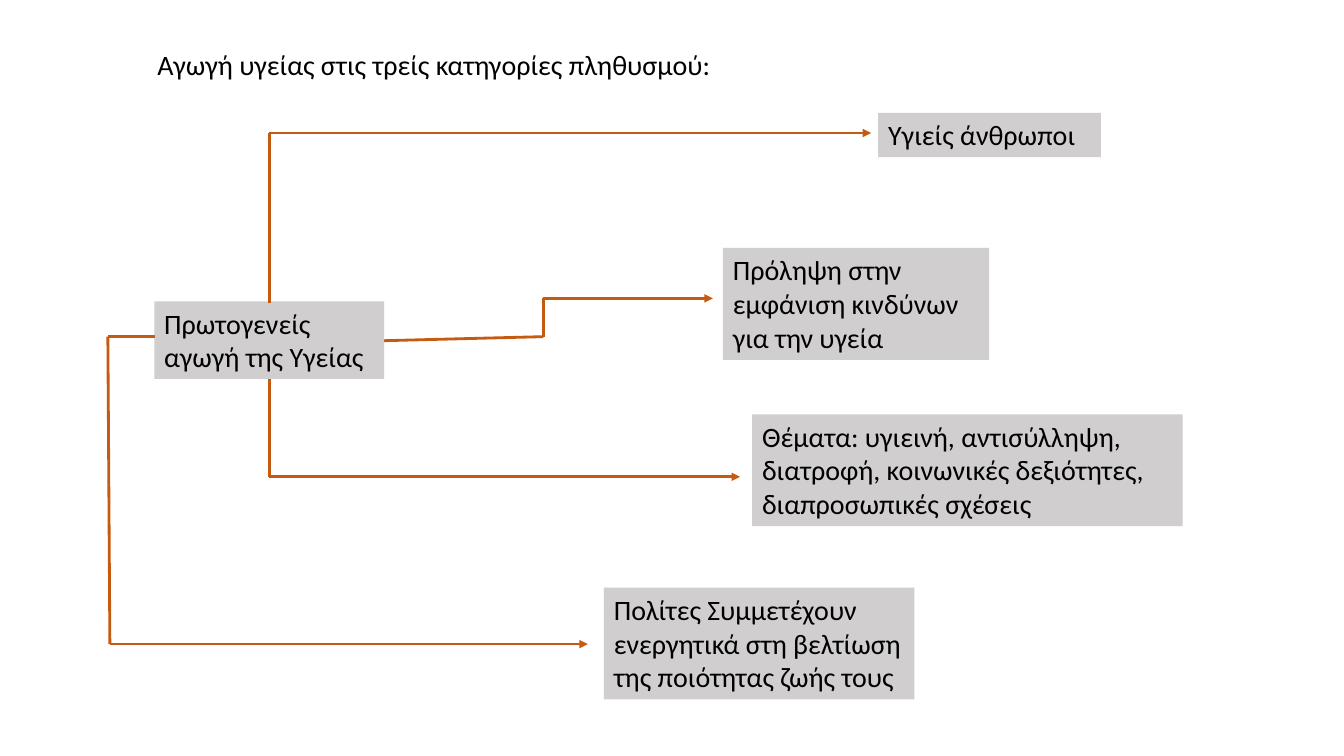
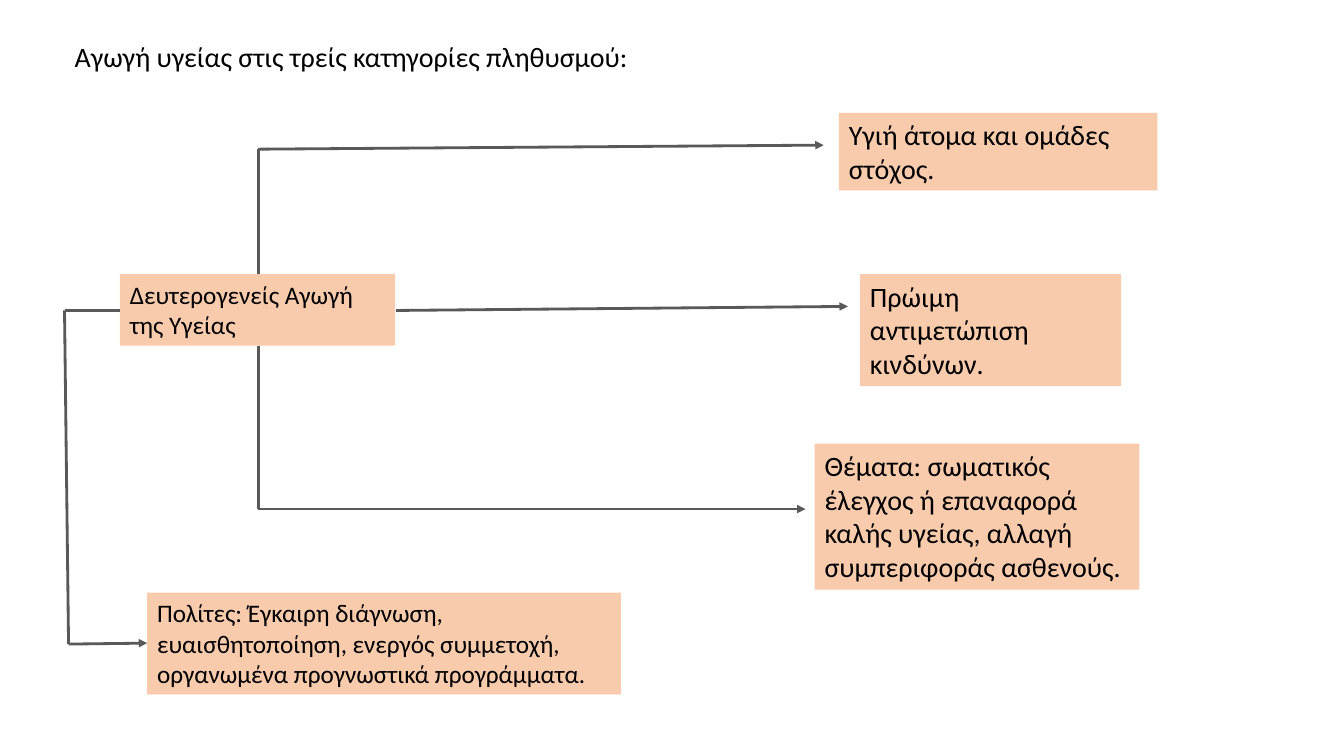
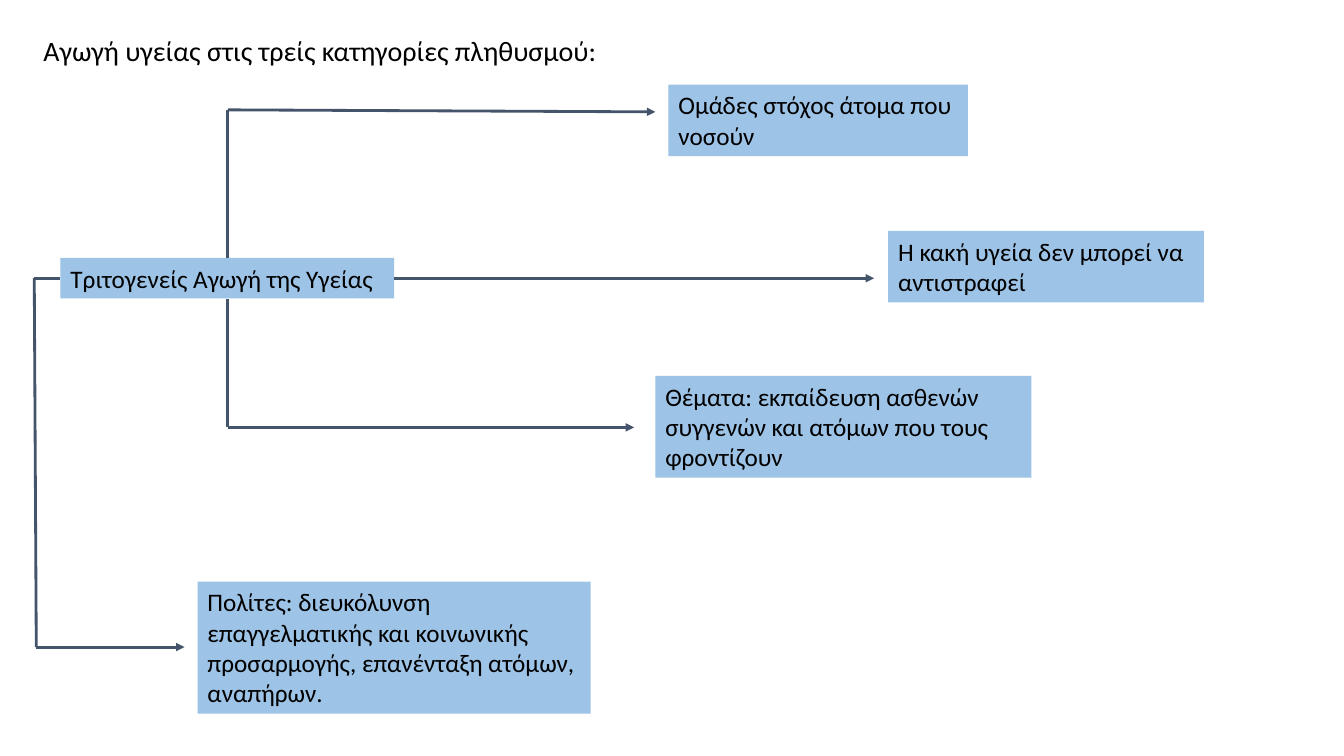
from dataclasses import dataclass
from itertools import pairwise

from lxml import etree
from pptx import Presentation
from pptx.dml.color import RGBColor
from pptx.enum.shapes import MSO_CONNECTOR, MSO_SHAPE
from pptx.enum.text import MSO_ANCHOR, MSO_AUTO_SIZE, PP_ALIGN
from pptx.oxml.ns import qn
from pptx.util import Inches, Pt

RECT = MSO_SHAPE.RECTANGLE
LINE = MSO_CONNECTOR.STRAIGHT
TOP = MSO_ANCHOR.TOP
LEFT = PP_ALIGN.LEFT
FIXED = MSO_AUTO_SIZE.NONE

BLACK = RGBColor(0x00, 0x00, 0x00)
GREY = RGBColor(0xD0, 0xCE, 0xCE)
RUST = RGBColor(0xC5, 0x5A, 0x11)
PEACH = RGBColor(0xF8, 0xCB, 0xAD)
SLATE = RGBColor(0x59, 0x59, 0x59)
SKY = RGBColor(0x9D, 0xC3, 0xE6)
NAVY = RGBColor(0x44, 0x54, 0x6A)

FONT = "Calibri"
TITLE = "Αγωγή υγείας στις τρείς κατηγορίες πληθυσμού:"
TITLE_W, TITLE_H = 6, 0.44
TITLE_SIZE = 20
LINE_W = 2

Point = tuple[float, float]
Route = list[Point]


@dataclass
class Box:
    text: str
    left: float
    top: float
    width: float
    height: float
    size: int = 20


@dataclass
class Page:
    title: Point
    fill: RGBColor
    ink: RGBColor
    boxes: list[Box]
    routes: list[Route]


PAGES = [
    Page(
        (1.46, 0.42), GREY, RUST,
        [
            Box("Πρωτογενείς αγωγή της Υγείας", 1.53, 2.99, 2.28, 0.77),
            Box("Υγιείς άνθρωποι", 8.71, 1.12, 2.21, 0.44),
            Box("Πρόληψη στην εμφάνιση κινδύνων για την υγεία",
                7.17, 2.46, 2.64, 1.11),
            Box("Θέματα: υγιεινή, αντισύλληψη, διατροφή, κοινωνικές "
                "δεξιότητες, διαπροσωπικές σχέσεις",
                7.46, 4.11, 4.27, 1.11),
            Box("Πολίτες Συμμετέχουν ενεργητικά στη βελτίωση της "
                "ποιότητας ζωής τους", 5.99, 5.83, 3.08, 1.11),
        ],
        [
            [(2.67, 3.01), (2.67, 1.32), (8.64, 1.32)],
            [(3.81, 3.38), (5.39, 3.34), (5.39, 2.96), (7.07, 2.96)],
            [(2.67, 3.76), (2.67, 4.73), (7.34, 4.73)],
            [(1.54, 3.34), (1.07, 3.34), (1.09, 6.39), (5.83, 6.39)],
        ],
    ),
    Page(
        (0.64, 0.34), PEACH, SLATE,
        [
            Box("Δευτερογενείς Αγωγή της Υγείας", 1.19, 2.72, 2.73, 0.71, 18),
            Box("Υγιή άτομα και ομάδες στόχος.", 8.32, 1.12, 3.16, 0.77),
            Box("Πρώιμη αντιμετώπιση κινδύνων.", 8.53, 2.72, 2.59, 1.11),
            Box("Θέματα: σωματικός έλεγχος ή επαναφορά καλής υγείας, "
                "αλλαγή συμπεριφοράς ασθενούς.", 8.08, 4.4, 3.22, 1.45),
            Box("Πολίτες: Έγκαιρη διάγνωση, ευαισθητοποίηση, ενεργός "
                "συμμετοχή, οργανωμένα προγνωστικά προγράμματα.",
                1.46, 5.88, 4.7, 1.01, 18),
        ],
        [
            [(3.93, 3.08), (8.41, 3.04)],
            [(2.56, 2.72), (2.56, 1.48), (8.17, 1.44)],
            [(2.56, 3.43), (2.56, 5.05), (7.99, 5.05)],
            [(1.19, 3.08), (0.64, 3.08), (0.68, 6.39), (1.46, 6.38)],
        ],
    ),
    Page(
        (0.33, 0.28), SKY, NAVY,
        [
            Box("Τριτογενείς Αγωγή της Υγείας", 0.6, 2.56, 3.31, 0.4, 18),
            Box("Ομάδες στόχος άτομα που νοσούν", 6.63, 0.84, 2.97, 0.71, 18),
            Box("Η κακή υγεία δεν μπορεί να αντιστραφεί",
                8.81, 2.29, 3.13, 0.71, 18),
            Box("Θέματα: εκπαίδευση ασθενών συγγενών και ατόμων που τους "
                "φροντίζουν", 6.5, 3.73, 3.73, 1.01, 18),
            Box("Πολίτες: διευκόλυνση επαγγελματικής και κοινωνικής "
                "προσαρμογής, επανένταξη ατόμων, αναπήρων.",
                1.96, 5.77, 3.9, 1.31, 18),
        ],
        [
            [(3.91, 2.76), (8.67, 2.76)],
            [(2.26, 2.56), (2.26, 1.09), (6.5, 1.11)],
            [(2.26, 2.97), (2.26, 4.24), (6.29, 4.24)],
            [(0.6, 2.76), (0.34, 2.76), (0.36, 6.42), (1.83, 6.42)],
        ],
    ),
]


def write(shape, text: str, size: int) -> None:
    frame = shape.text_frame
    frame.word_wrap = True
    frame.auto_size = FIXED
    frame.vertical_anchor = TOP
    para = frame.paragraphs[0]
    para.alignment = LEFT
    para.line_spacing = 1.0
    run = para.add_run()
    run.text = text
    run.font.name = FONT
    run.font.size = Pt(size)
    run.font.color.rgb = BLACK


def add_title(slide, at: Point) -> None:
    title = slide.shapes.title
    title.left, title.top = map(Inches, at)
    title.width, title.height = Inches(TITLE_W), Inches(TITLE_H)
    write(title, TITLE, TITLE_SIZE)


def add_box(slide, box: Box, fill: RGBColor) -> None:
    shape = slide.shapes.add_shape(
        RECT, Inches(box.left), Inches(box.top),
        Inches(box.width), Inches(box.height))
    shape.shadow.inherit = False
    shape.fill.solid()
    shape.fill.fore_color.rgb = fill
    shape.line.fill.background()
    write(shape, box.text, box.size)


def add_line(slide, start: Point, end: Point, ink: RGBColor):
    line = slide.shapes.add_connector(
        LINE, *map(Inches, start), *map(Inches, end))
    line.line.color.rgb = ink
    line.line.width = Pt(LINE_W)
    etree.SubElement(line._element.spPr, qn("a:effectLst"))
    return line


def add_route(slide, route: Route, ink: RGBColor) -> None:
    """Join the points with lines and put an arrowhead on the last."""
    lines = [add_line(slide, a, b, ink) for a, b in pairwise(route)]
    stroke = lines[-1].line._get_or_add_ln()
    etree.SubElement(stroke, qn("a:tailEnd"), type="triangle")


def main() -> None:
    deck = Presentation()
    deck.slide_width, deck.slide_height = Inches(13.33), Inches(7.5)
    layout = deck.slide_layouts.get_by_name("Title Only")
    for page in PAGES:
        slide = deck.slides.add_slide(layout)
        add_title(slide, page.title)
        for box in page.boxes:
            add_box(slide, box, page.fill)
        for route in page.routes:
            add_route(slide, route, page.ink)
    deck.save("out.pptx")


if __name__ == "__main__":
    main()
